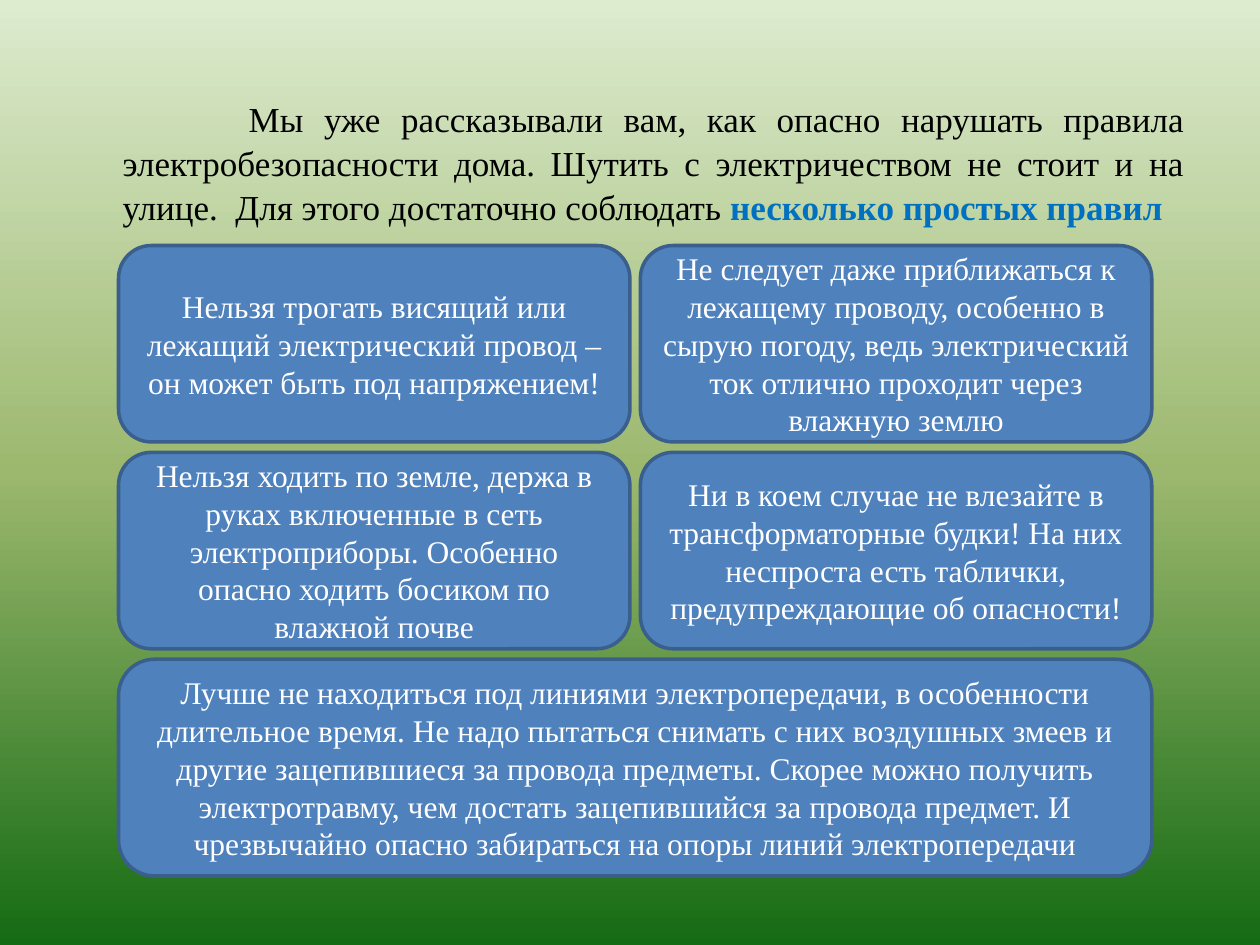
from copy import deepcopy
from dataclasses import dataclass

from lxml.etree import SubElement
from pptx import Presentation
from pptx.dml.color import RGBColor as Color
from pptx.enum.shapes import MSO_SHAPE as Preset
from pptx.enum.text import MSO_ANCHOR as Anchor, PP_ALIGN as Align
from pptx.oxml.ns import qn
from pptx.util import Cm, Pt


@dataclass(frozen=True)
class Theme:
    font: str = "Times New Roman"
    intro_size: int = 20
    rule_size: int = 18
    text: str = "000000"
    accent: str = "0070C0"
    rule_text: str = "FFFFFF"
    rule_fill: str = "4F81BD"
    rule_line: str = "3A5F8C"
    background: tuple = ((0, "DDEBCF"), (0.5, "9CB86E"), (1, "156B13"))


THEME = Theme()

# Grid of rule cards, in centimetres
LEFT, TOP = 2.39, 4.95
CARD_WIDTH, CARD_HEIGHT, GAP = 10.31, 3.96, 0.21
LAST_HEIGHT = 4.37

INTRO = ("Мы уже рассказывали вам, как опасно нарушать правила электробезопасности "
         "дома. Шутить с электричеством не стоит и на улице.  Для этого достаточно "
         "соблюдать ")
INTRO_ACCENT = "несколько простых правил"
RULES = (
    "Нельзя трогать висящий или лежащий электрический провод – он может быть под "
    "напряжением!",
    "Не следует даже приближаться к лежащему проводу, особенно в сырую погоду, ведь "
    "электрический ток отлично проходит через влажную землю",
    "Нельзя ходить по земле, держа в руках включенные в сеть электроприборы. "
    "Особенно опасно ходить босиком по влажной почве",
    "Ни в коем случае не влезайте в трансформаторные будки! На них неспроста есть "
    "таблички, предупреждающие об опасности!",
)
LAST_RULE = (
    "Лучше не находиться под линиями электропередачи, в особенности длительное время. "
    "Не надо пытаться снимать с них воздушных змеев и другие зацепившиеся за провода "
    "предметы. Скорее можно получить электротравму, чем достать зацепившийся за "
    "провода предмет. И чрезвычайно опасно забираться на опоры линий электропередачи"
)


def add_text(paragraph, text, *, size, color, bold=False):
    run = paragraph.add_run()
    run.text = text
    run.font.name = THEME.font
    run.font.size = Pt(size)
    run.font.bold = bold
    run.font.color.rgb = Color.from_string(color)


def paint_background(slide):
    fill = slide.background.fill
    fill.gradient()
    fill.gradient_angle = 270  # counter-clockwise: light at the top
    stop_list = slide.element.find(".//" + qn("a:gsLst"))
    stop_list.append(deepcopy(stop_list[-1]))
    for stop, (position, color) in zip(fill.gradient_stops, THEME.background):
        stop.position = position
        stop.color.rgb = Color.from_string(color)


def fill_intro(placeholder):
    placeholder.left, placeholder.top = Cm(1.27), Cm(1.4)
    placeholder.width, placeholder.height = Cm(22.86), Cm(15.62)
    frame = placeholder.text_frame
    frame.margin_top = Cm(0.54)
    paragraph = frame.paragraphs[0]
    paragraph.alignment = Align.JUSTIFY
    paragraph.space_before = Pt(0)
    paragraph.line_spacing = Pt(25)
    properties = paragraph._p.get_or_add_pPr()
    properties.set("marL", str(Cm(0.95)))
    properties.set("indent", str(Cm(2.54)))
    SubElement(properties, qn("a:buNone"))
    add_text(paragraph, INTRO, size=THEME.intro_size, color=THEME.text)
    add_text(paragraph, INTRO_ACCENT, size=THEME.intro_size, color=THEME.accent, bold=True)


def add_rule(slide, text, left, top, width, height):
    card = slide.shapes.add_shape(
        Preset.ROUNDED_RECTANGLE, Cm(left), Cm(top), Cm(width), Cm(height))
    card.shadow.inherit = False
    card.fill.solid()
    card.fill.fore_color.rgb = Color.from_string(THEME.rule_fill)
    card.line.color.rgb = Color.from_string(THEME.rule_line)
    card.line.width = Pt(2)
    frame = card.text_frame
    frame.word_wrap = True
    frame.vertical_anchor = Anchor.MIDDLE
    paragraph = frame.paragraphs[0]
    paragraph.alignment = Align.CENTER
    add_text(paragraph, text, size=THEME.rule_size, color=THEME.rule_text)


def main():
    presentation = Presentation()
    presentation.slide_width, presentation.slide_height = Cm(25.4), Cm(19.05)
    slide = presentation.slides.add_slide(presentation.slide_layouts[1])
    paint_background(slide)

    # Introduction in the body placeholder; the slide has no title
    title = slide.shapes.title.element
    title.getparent().remove(title)
    fill_intro(slide.placeholders[1])

    # Four rules in two columns, then a full-width one
    for index, rule in enumerate(RULES):
        row, column = divmod(index, 2)
        add_rule(slide, rule, LEFT + column * (CARD_WIDTH + GAP),
                 TOP + row * (CARD_HEIGHT + GAP), CARD_WIDTH, CARD_HEIGHT)
    add_rule(slide, LAST_RULE, LEFT, TOP + 2 * (CARD_HEIGHT + GAP),
             2 * CARD_WIDTH + GAP, LAST_HEIGHT)

    presentation.save("out.pptx")


if __name__ == "__main__":
    main()
